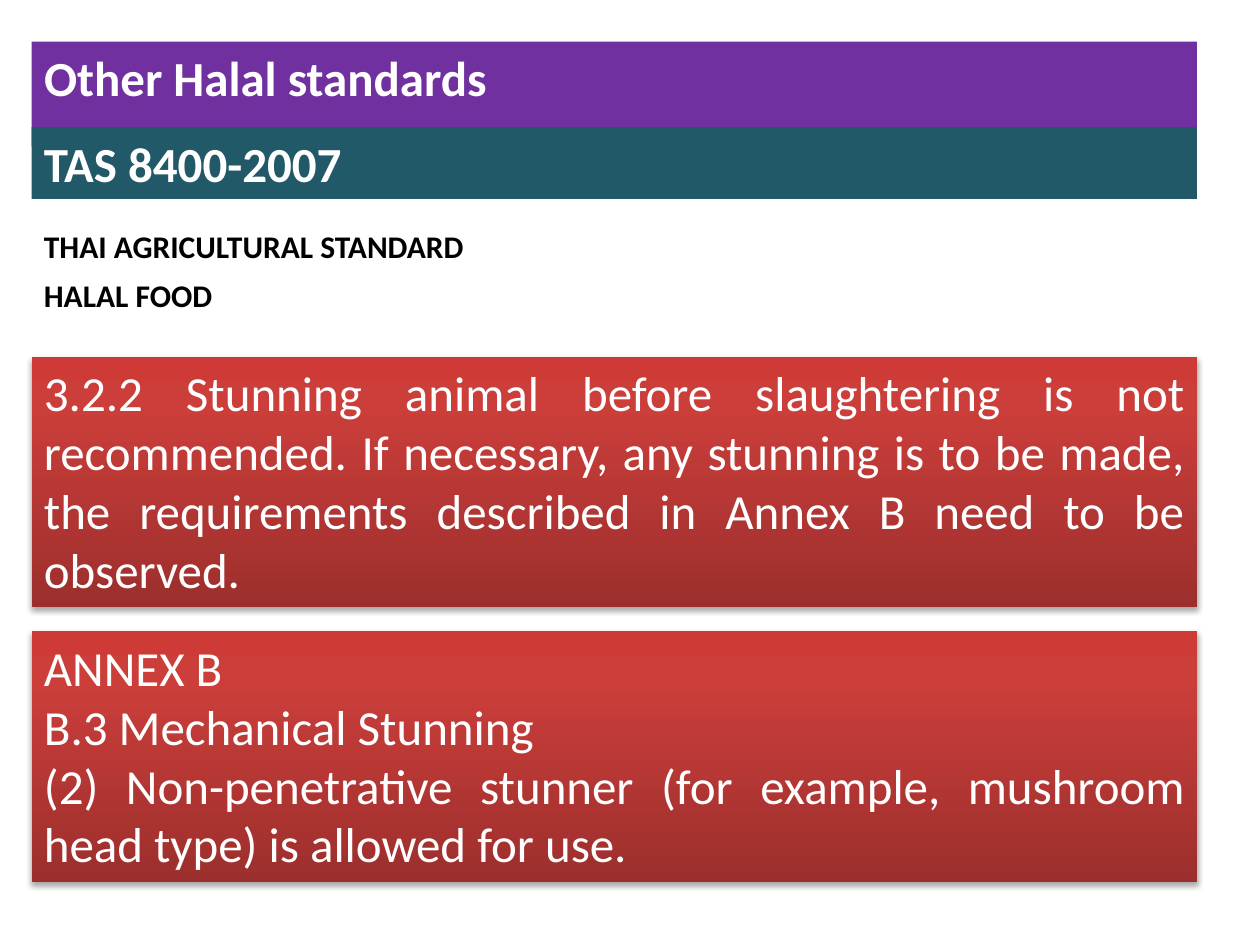
"""Build a slide on the Thai Halal food standard and its stunning rules."""
from copy import deepcopy

from pptx import Presentation
from pptx.dml.color import RGBColor
from pptx.enum.shapes import MSO_SHAPE
from pptx.enum.text import MSO_ANCHOR, MSO_AUTO_SIZE, PP_ALIGN
from pptx.oxml import parse_xml
from pptx.oxml.ns import nsdecls, qn
from pptx.util import Inches, Pt

LEFT, WIDTH = Inches(0.25), Inches(9.25)
BAR_HEIGHT, PANEL_HEIGHT = Inches(0.57), Inches(1.99)
GRADIENT = [(0, "9C2F2D"), (0.8, "CB3E3A"), (1, "CE3B37")]
SHADOW = (
    f'<a:outerShdw {nsdecls("a")} blurRad="40000" dist="23000" dir="5400000" rotWithShape="0">'
    '<a:srgbClr val="000000"><a:alpha val="35000"/></a:srgbClr></a:outerShdw>'
)


def colour(value):
    """Turn a hex string into a colour."""
    return RGBColor.from_string(value)


def write(box, text, size, ink, bold=False, align=PP_ALIGN.LEFT, wrap=True):
    """Fill a box with text and format its runs."""
    frame = box.text_frame
    frame.text = text
    frame.word_wrap = wrap
    frame.auto_size = MSO_AUTO_SIZE.SHAPE_TO_FIT_TEXT
    frame.vertical_anchor = MSO_ANCHOR.TOP
    for para in frame.paragraphs:
        para.alignment = align
        for span in para.runs:
            span.font.name = "Calibri"
            span.font.size = Pt(size)
            span.font.bold = bold
            span.font.color.rgb = colour(ink)


deck = Presentation()
deck.slide_width, deck.slide_height = Inches(10), Inches(7.5)
page = deck.slides.add_slide(deck.slide_layouts[5])

title = page.shapes.title
title.left, title.top, title.width, title.height = LEFT, Inches(0.33), WIDTH, BAR_HEIGHT
standard = page.shapes.add_shape(MSO_SHAPE.RECTANGLE, LEFT, Inches(1.01), WIDTH, BAR_HEIGHT)
standard.shadow.inherit = False
standard.line.fill.background()
bars = [
    (title, "Other Halal standards", "7030A0"),
    (standard, "TAS 8400-2007", "215968"),
]
for bar, text, fill in bars:
    bar.fill.solid()
    bar.fill.fore_color.rgb = colour(fill)
    write(bar, text, 28, "FFFFFF", bold=True)

labels = [
    ("THAI AGRICULTURAL STANDARD", 1.75, 3.57),
    ("HALAL FOOD", 2.14, 1.55),
]
for text, top, width in labels:
    label = page.shapes.add_textbox(LEFT, Inches(top), Inches(width), Inches(0.4))
    write(label, text, 18, "000000", bold=True, wrap=False)

panels = [
    (2.83, "3.2.2 Stunning animal before slaughtering is not recommended. If necessary, "
           "any stunning is to be made, the requirements described in Annex B need to be observed."),
    (5.01, "ANNEX B\nB.3 Mechanical Stunning\n"
           "(2) Non-penetrative stunner (for example, mushroom head type) is allowed for use."),
]
for top, text in panels:
    panel = page.shapes.add_shape(MSO_SHAPE.RECTANGLE, LEFT, Inches(top), WIDTH, PANEL_HEIGHT)
    panel.line.fill.background()
    panel.fill.gradient()
    panel.fill.gradient_angle = 90
    stop_list = panel.element.spPr.find(".//" + qn("a:gsLst"))
    stop_list.append(deepcopy(stop_list[-1]))
    for stop, (position, shade) in zip(panel.fill.gradient_stops, GRADIENT):
        stop.position = position
        stop.color.rgb = colour(shade)
    panel.shadow.inherit = False
    panel.element.spPr.find(qn("a:effectLst")).append(parse_xml(SHADOW))
    write(panel, text, 28, "FFFFFF", align=PP_ALIGN.JUSTIFY)

deck.save("out.pptx")
